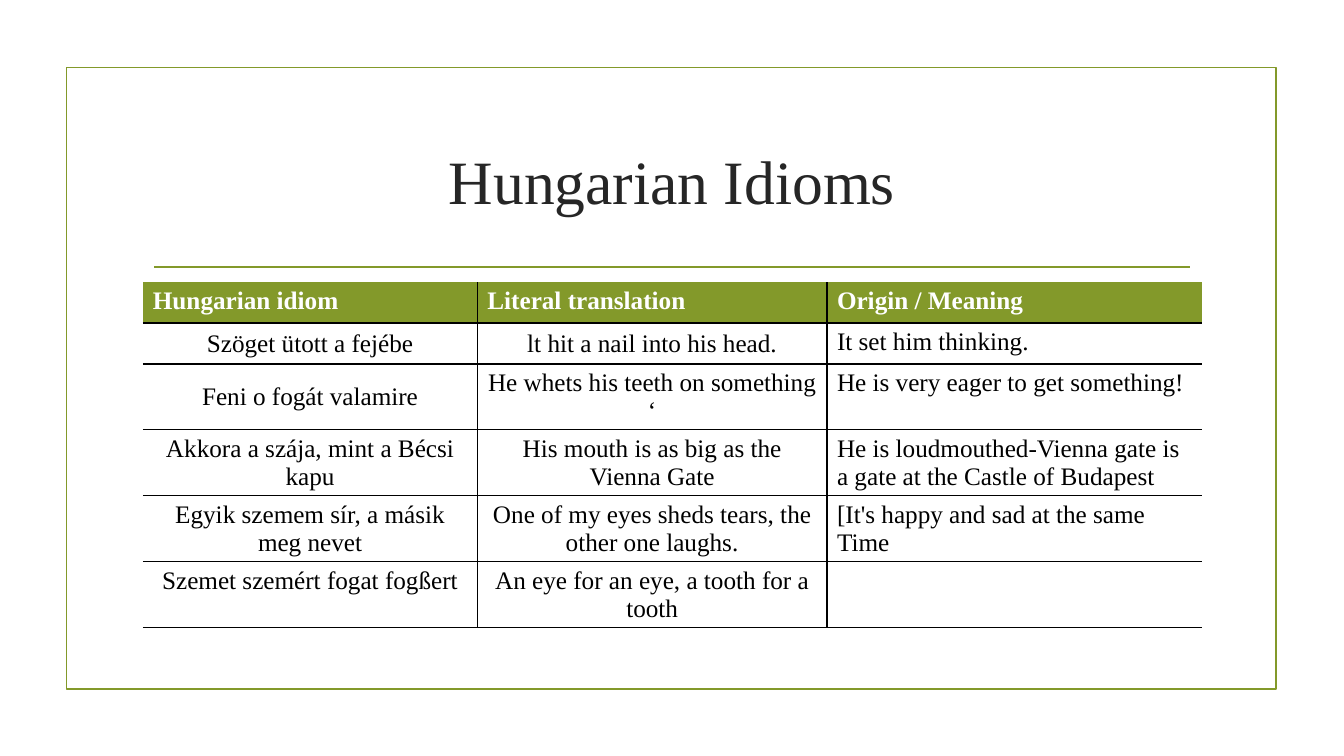
from dataclasses import dataclass

from lxml.etree import SubElement
from pptx import Presentation
from pptx.dml.color import RGBColor
from pptx.enum.shapes import MSO_CONNECTOR as Connector, MSO_SHAPE as Shape
from pptx.enum.text import MSO_ANCHOR as Anchor, PP_ALIGN as Align
from pptx.oxml.ns import qn
from pptx.util import Cm, Pt

TITLE = "Hungarian Idioms"
HEADINGS = ("Hungarian idiom", "Literal translation", "Origin / Meaning")
IDIOMS = [
    ("Szöget ütott a fejébe", "lt hit a nail into his head.", "It set him thinking."),
    ("Feni o fogát valamire", "He whets his teeth on something ‘",
     "He is very eager to get something!"),
    ("Akkora a szája, mint a Bécsi kapu", "His mouth is as big as the Vienna Gate",
     "He is loudmouthed-Vienna gate is a gate at the Castle of Budapest"),
    ("Egyik szemem sír, a másik meg nevet",
     "One of my eyes sheds tears, the other one laughs.",
     "[It's happy and sad at the same Time"),
    ("Szemet szemért fogat fogßert", "An eye for an eye, a tooth for a tooth", ""),
]


@dataclass(frozen=True)
class Theme:
    font: str = "Times New Roman"
    accent: str = "83992A"
    heading: str = "FFFFFF"
    title: str = "262626"
    ink: str = "000000"
    title_size: int = 44
    table_size: int = 18
    rule_width: float = 1.25
    grid_width: int = 1


THEME = Theme()
COLUMN_WIDTHS = (Cm(8.43), Cm(8.81), Cm(9.44))
ROW_HEIGHT = Cm(1.03)
LEFT, TABLE_TOP, CONTENT_WIDTH = Cm(3.6), Cm(7.11), Cm(26.68)


def write(paragraph, text, size, color, bold=False):
    run = paragraph.add_run()
    run.text = text
    run.font.name = THEME.font
    run.font.size = Pt(size)
    run.font.bold = bold
    run.font.color.rgb = RGBColor.from_string(color)


def style_line(line):
    line.color.rgb = RGBColor.from_string(THEME.accent)
    line.width = Pt(THEME.rule_width)


def set_borders(cell, visible):
    properties = cell._tc.get_or_add_tcPr()
    for position, side in enumerate(("lnL", "lnR", "lnT", "lnB")):
        border = SubElement(properties, qn(f"a:{side}"), w=str(Pt(THEME.grid_width)))
        if side in visible:
            fill = SubElement(border, qn("a:solidFill"))
            SubElement(fill, qn("a:srgbClr"), val=THEME.ink)
        else:
            SubElement(border, qn("a:noFill"))
        properties.remove(border)
        properties.insert(position, border)


def fill_cell(cell, text, row, column):
    header = row == 0
    centred = not header and column < len(HEADINGS) - 1
    last_idiom = row == len(IDIOMS) and column == 0
    cell.vertical_anchor = Anchor.MIDDLE if centred and not last_idiom else Anchor.TOP
    if header:
        cell.fill.solid()
        cell.fill.fore_color.rgb = RGBColor.from_string(THEME.accent)
    else:
        cell.fill.background()
    paragraph = cell.text_frame.paragraphs[0]
    paragraph.alignment = Align.CENTER if centred else Align.LEFT
    paragraph.font.size = Pt(THEME.table_size)
    if text:
        write(paragraph, text, THEME.table_size,
              THEME.heading if header else THEME.ink, header)
    visible = {"lnB"}
    if not header:
        visible.add("lnT")
    if column > 0:
        visible.add("lnL")
    if column < len(HEADINGS) - 1:
        visible.add("lnR")
    set_borders(cell, visible)


def add_frame(slide):
    frame = slide.shapes.add_shape(Shape.RECTANGLE, Cm(1.68), Cm(1.7), Cm(30.48), Cm(15.67))
    frame.shadow.inherit = False
    frame.fill.background()
    style_line(frame.line)
    rule = slide.shapes.add_connector(Connector.STRAIGHT, Cm(3.89), Cm(6.73), Cm(30), Cm(6.73))
    style_line(rule.line)
    SubElement(rule._element.spPr, qn("a:effectLst"))


def add_title(slide):
    title = slide.shapes.title
    title.left, title.top, title.width, title.height = LEFT, Cm(2.72), CONTENT_WIDTH, Cm(3.63)
    title.text_frame.vertical_anchor = Anchor.MIDDLE
    paragraph = title.text_frame.paragraphs[0]
    paragraph.alignment = Align.CENTER
    write(paragraph, TITLE, THEME.title_size, THEME.title)


def add_idioms(slide):
    rows = [HEADINGS, *IDIOMS]
    idioms = slide.shapes.add_table(len(rows), len(HEADINGS), LEFT, TABLE_TOP,
                                    CONTENT_WIDTH, ROW_HEIGHT * len(rows)).table
    idioms.horz_banding = False
    for column, width in zip(idioms.columns, COLUMN_WIDTHS):
        column.width = width
    for row, texts in enumerate(rows):
        idioms.rows[row].height = ROW_HEIGHT
        for column, text in enumerate(texts):
            fill_cell(idioms.cell(row, column), text, row, column)


def main():
    deck = Presentation()
    deck.slide_width, deck.slide_height = Cm(33.87), Cm(19.05)
    slide = deck.slides.add_slide(deck.slide_layouts[5])
    add_frame(slide)
    add_title(slide)
    add_idioms(slide)
    deck.save("out.pptx")


if __name__ == "__main__":
    main()
